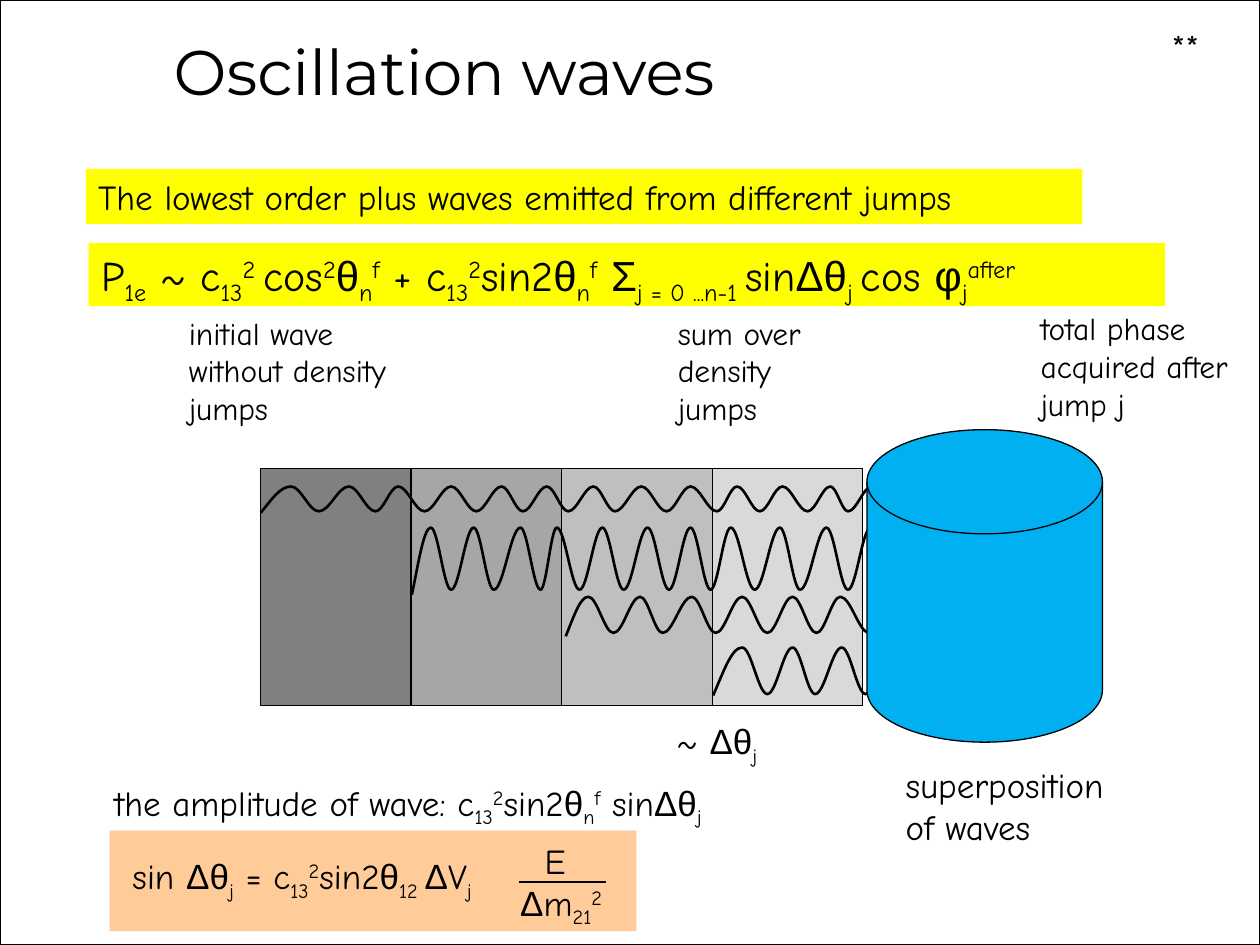
from itertools import groupby

from lxml import etree
from pptx import Presentation
from pptx.dml.color import RGBColor
from pptx.enum import shapes, text
from pptx.oxml.ns import qn
from pptx.util import Pt

THEME = {
    "ink": "000000", "paper": "FFFFFF", "highlight": "FFFF00", "note": "FFCC99",
    "detector": "00B0F0", "layers": ["808080", "A6A6A6", "BFBFBF", "D9D9D9"],
    "title_font": "Montserrat", "body_font": "Comic Neue", "greek_font": "Arial",
    "title": 36, "formula": 24, "body": 20, "caption": 18,
    "outline": 0.75, "stroke": 1.5,
}
SLIDE_SIZE = (720, 540)

TITLE = ("Oscillation waves", (53.3, 15.1, 401, 60.5))

# A run starting with _ is a subscript, one starting with ^ a superscript.
AMPLITUDE = ["c", "_13", "^2", "sin2θ", "_n", "^f"]
PROBABILITY = ["P", "_1e", " ~ c", "_13", "^2 ", "cos", "^2", "θ", "_n", "^f", " + ",
               *AMPLITUDE, " Σ", "_j = 0 ...n-1 ", "sinΔθ", "_j ", "cos φ", "_j", "^after"]
JUMP_ANGLE = ["sin Δθ", "_j", " = c", "_13", "^2", "sin2θ", "_12 ", "ΔV", "_j"]

# paragraphs, box (left, top, width, height), size, fill
FORMULA_BAND = ([PROBABILITY], (50.7, 139, 615, 36), "formula", "highlight")
LABELS = [
    ([["initial wave without density jumps"]], (100.8, 175.7, 147, 72.7), "caption", None),
    ([["the amplitude of wave: ", *AMPLITUDE, " sinΔθ", "_j"]],
     (58.3, 442.8, 401, 31.7), "body", "paper"),
    ([["~ Δθ", "_j"]], (379.4, 407.5, 79.2, 31.7), "body", "paper"),
    ([["superposition of waves"]], (510.5, 432.7, 139.7, 55.4), "body", None),
    ([["The lowest order plus waves emitted from different jumps"]],
     (49, 96.5, 569.5, 31.7), "body", "highlight"),
    ([["sum over"], ["density jumps"]], (380.2, 175.7, 97.2, 72.7), "caption", None),
    ([["total phase"], ["acquired after"], ["jump j"]],
     (587.5, 173.2, 150.5, 72.7), "caption", None),
    ([["**"]], (662.4, 10.8, 52.6, 31.7), "body", None),
]
ANGLE_LABEL = ([JUMP_ANGLE], (62.6, 484.6, 252.7, 31.7), "body", None)
FRACTION = ([["E"], ["Δm", "_21", "^2"]], (290.2, 475.9, 74.2, 55.4), "body", None)
FRACTION_BAR = (296.6, 504, 346.3, 504)

NOTE_BOX = (62.6, 474.5, 301, 57.6)
DETECTOR_BOX = (495.4, 245.5, 134.6, 178.6)
LAYERS_BOX = (149, 267.8, 344, 135.5)

WAVES = [
    {"start": (149, 293), "end": (510.5, 291.6), "crest": 278, "trough": 292.2,
     "turns": [166.3, 182.2, 199.4, 214.6, 227.5, 242.6, 257.8, 272.2, 286.6, 298.8,
               312.5, 324.7, 339.1, 351.4, 366.5, 380.9, 394.6, 409.7, 421.2, 434.2,
               447.1, 461.5, 474.5, 484.6, 498.2]},
    {"start": (235.4, 339.8), "end": (508.3, 324.7), "crest": 301.5, "trough": 337,
     "turns": [246.2, 257.8, 270.7, 282.2, 297.4, 308.9, 318.2, 331.2, 344.2, 356.4,
               370.1, 382.3, 394.6, 406.1, 417.6, 431.3, 445.7, 457.2, 472.3, 484.6,
               497.5]},
    {"start": (323.3, 363.6), "end": (507.6, 341.3), "crest": 341, "trough": 361.7,
     "turns": [336.2, 350.6, 365.8, 378.7, 395.3, 409, 424.1, 438.5, 452.9, 466.6,
               480.2, 496.8]},
    {"start": (407.5, 397.4), "end": (507.6, 370.8), "crest": 370, "trough": 396.6,
     "turns": [424.1, 438.5, 452.9, 465.8, 481, 494.6]},
]


def color(name):
    return RGBColor.from_string(THEME.get(name, name))


def points(values):
    return [Pt(value) for value in values]


def is_greek(letter):
    return "Ͱ" <= letter <= "Ͽ"


def style_shape(shape, fill=None, line=None, width=THEME["outline"]):
    shape.shadow.inherit = False
    if fill:
        shape.fill.solid()
        shape.fill.fore_color.rgb = color(fill)
    else:
        shape.fill.background()
    if line:
        shape.line.color.rgb = color(line)
        shape.line.width = Pt(width)
    else:
        shape.line.fill.background()


def add_block(slide, box, kind=shapes.MSO_SHAPE.RECTANGLE, **style):
    shape = slide.shapes.add_shape(kind, *points(box))
    style_shape(shape, **style)
    return shape


def add_runs(paragraph, content, size, font=THEME["body_font"]):
    """Add the runs, with Greek letters in their own font."""
    for part in content:
        baseline = {"_": "-25000", "^": "30000"}.get(part[0])
        for greek, letters in groupby(part[1:] if baseline else part, is_greek):
            run = paragraph.add_run()
            run.text = "".join(letters)
            run.font.size = Pt(THEME[size])
            run.font.name = THEME["greek_font"] if greek else font
            run.font.color.rgb = color("ink")
            if baseline:
                run.font._element.set("baseline", baseline)


def add_text(slide, paragraphs, box, size, fill=None, indents=()):
    shape = slide.shapes.add_textbox(*points(box))
    if fill:
        shape.fill.solid()
        shape.fill.fore_color.rgb = color(fill)
    frame = shape.text_frame
    frame.word_wrap = True
    for index, content in enumerate(paragraphs):
        paragraph = frame.add_paragraph() if index else frame.paragraphs[0]
        if index < len(indents):
            paragraph._p.get_or_add_pPr().set("marL", str(Pt(indents[index])))
        add_runs(paragraph, content, size)


def add_title(slide, title, box):
    shape = slide.shapes.title
    shape.left, shape.top, shape.width, shape.height = points(box)
    frame = shape.text_frame
    frame.word_wrap = False
    frame.auto_size = text.MSO_AUTO_SIZE.NONE
    frame.vertical_anchor = text.MSO_ANCHOR.TOP
    frame.paragraphs[0].alignment = text.PP_ALIGN.CENTER
    add_runs(frame.paragraphs[0], [title], "title", THEME["title_font"])


def add_wave(slide, start, end, crest, trough, turns):
    """Join alternating crests and troughs by curves that are level at each turn."""
    knots = [(x, trough if index % 2 else crest) for index, x in enumerate(turns)] + [end]
    builder = slide.shapes.build_freeform(*points(start), scale=1.0)
    builder.add_line_segments([points(knot) for knot in knots], close=False)
    shape = builder.convert_to_shape()
    style_shape(shape, line="ink", width=THEME["stroke"])

    segments = list(shape._element.iter(qn("a:lnTo")))
    corners = [(int(point.get("x")), int(point.get("y")))
               for point in shape._element.iter(qn("a:pt"))]
    for index, segment in enumerate(segments):
        (x0, y0), (x1, y1) = corners[index:index + 2]
        reach, middle = (x1 - x0) * 0.36, (y0 + y1) / 2
        controls = [(x0 + reach, y0 if index else middle),
                    (x1 - reach, middle if index == len(segments) - 1 else y1)]
        segment.tag = qn("a:cubicBezTo")
        for position, (x, y) in enumerate(controls):
            control = etree.Element(qn("a:pt"), x=str(round(x)), y=str(round(y)))
            segment.insert(position, control)


def add_rule(slide, ends):
    rule = slide.shapes.add_connector(shapes.MSO_CONNECTOR.STRAIGHT, *points(ends))
    rule.line.color.rgb = color("ink")
    rule.line.width = Pt(THEME["stroke"])
    etree.SubElement(rule._element.spPr, qn("a:effectLst"))


def main():
    presentation = Presentation()
    presentation.slide_width, presentation.slide_height = points(SLIDE_SIZE)
    slide = presentation.slides.add_slide(presentation.slide_layouts[5])

    border = add_block(slide, (0, 0, *SLIDE_SIZE), fill="paper", line="ink")
    slide.shapes._spTree.insert(2, border._element)  # behind the title
    add_block(slide, NOTE_BOX, fill="note")
    add_title(slide, *TITLE)
    add_text(slide, *FORMULA_BAND)

    left, top, width, height = LAYERS_BOX
    step = width / len(THEME["layers"])
    for index, shade in enumerate(THEME["layers"]):
        add_block(slide, (left + index * step, top, step, height), fill=shade, line="ink")
    for wave in WAVES:
        add_wave(slide, **wave)
    add_block(slide, DETECTOR_BOX, shapes.MSO_SHAPE.FLOWCHART_MAGNETIC_DISK,
              fill="detector", line="ink")

    for label in LABELS:
        add_text(slide, *label)
    add_text(slide, *ANGLE_LABEL, indents=[6])
    add_text(slide, *FRACTION, indents=[14])
    add_rule(slide, FRACTION_BAR)
    presentation.save("out.pptx")


if __name__ == "__main__":
    main()
